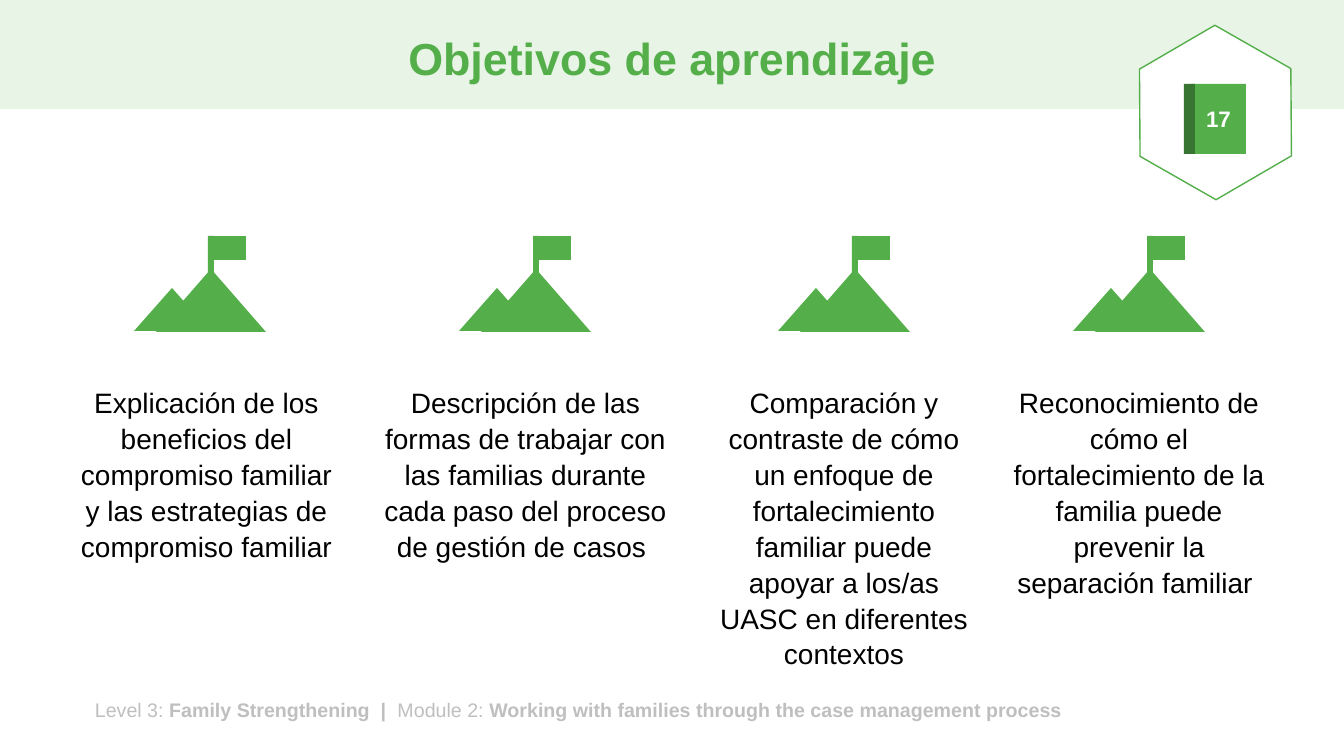
from pptx import Presentation
from pptx.dml.color import RGBColor
from pptx.enum.shapes import MSO_SHAPE as SHAPE
from pptx.enum.text import MSO_ANCHOR as ANCHOR, MSO_AUTO_SIZE as AUTO, PP_ALIGN as ALIGN
from pptx.util import Emu, Pt

GREEN, DARK, PALE, GRAY = "54AF4B", "387532", "E8F4E6", "BFBFBF"
WHITE, BLACK = "FFFFFF", "000000"


def px(n):
    return Emu(round(n * 914400 / 100.8))


def color(value):
    return RGBColor.from_string(value)


class Deck:
    font = "Arial"

    def __init__(self, width, height):
        self.prs = Presentation()
        self.prs.slide_width, self.prs.slide_height = px(width), px(height)
        self.s = self.prs.slides.add_slide(self.prs.slide_layouts[6])

    def fill_text(self, tf, *runs, size, fill, align=ALIGN.LEFT, spacing=1.0,
                  anchor=ANCHOR.TOP, wrap=True, auto=AUTO.NONE):
        tf.word_wrap, tf.auto_size, tf.vertical_anchor = wrap, auto, anchor
        p = tf.paragraphs[0]
        p.alignment, p.line_spacing = align, spacing
        for text, bold in runs:
            r = p.add_run()
            r.text = text
            r.font.name, r.font.size, r.font.bold = self.font, Pt(size), bold
            r.font.color.rgb = color(fill)

    def text(self, box, *runs, **style):
        sp = self.s.shapes.add_textbox(*map(px, box))
        self.fill_text(sp.text_frame, *runs, **style)

    def group(self):
        return self.s.shapes.add_group_shape().shapes

    def shape(self, kind, box, fill, line=None, shapes=None):
        sp = (shapes or self.s.shapes).add_shape(kind, *map(px, box))
        sp.shadow.inherit = False
        sp.fill.solid()
        sp.fill.fore_color.rgb = color(fill)
        if line:
            sp.line.color.rgb = color(line)
            sp.line.width = Pt(1)
        else:
            sp.line.fill.background()
        return sp

    def mountain(self, x, y):
        shapes = self.group()
        for kind, dx, dy, w, h in (
            (SHAPE.RECTANGLE, 74, 0, 6, 40),
            (SHAPE.RECTANGLE, 78, 0, 34, 24),
            (SHAPE.ISOSCELES_TRIANGLE, 22, 33, 110, 63),
            (SHAPE.ISOSCELES_TRIANGLE, 0, 52, 76, 43),
        ):
            self.shape(kind, (x + dx, y + dy, w, h), GREEN, shapes=shapes)

    def badge(self, number):
        shapes = self.group()
        sp = self.shape(SHAPE.HEXAGON, (1128, 37, 175, 151), WHITE, GREEN, shapes)
        sp.adjustments[0] = 0.29
        sp.rotation = 29.7
        sp = self.shape(SHAPE.RECTANGLE, (1191, 84, 55, 70), GREEN, shapes=shapes)
        self.fill_text(sp.text_frame, (number, True), size=16, fill=WHITE,
                       align=ALIGN.CENTER, anchor=ANCHOR.MIDDLE, wrap=False)
        self.shape(SHAPE.RECTANGLE, (1184, 84, 11, 70), DARK, shapes=shapes)


def main():
    deck = Deck(1344, 756)
    deck.shape(SHAPE.RECTANGLE, (0, 0, 1344, 109), PALE)
    deck.text((85, 693, 1070, 34),
              ("Level 3: ", False), ("Family Strengthening  |  ", True),
              ("Module 2: ", False),
              ("Working with families through the case management process", True),
              size=14, fill=GRAY, auto=AUTO.SHAPE_TO_FIT_TEXT)
    deck.text((93, 13, 1159, 96), ("Objetivos de aprendizaje", True),
              size=32, fill=GREEN, align=ALIGN.CENTER, spacing=0.9,
              anchor=ANCHOR.MIDDLE)

    objectives = (
        (67, 279, 192, 134, "Explicación de los beneficios del compromiso familiar "
         "y las estrategias de compromiso familiar"),
        (364, 323, 192, 459, "Descripción de las formas de trabajar con las familias "
         "durante cada paso del proceso de gestión de casos "),
        (706, 276, 300, 778, "Comparación y contraste de cómo un enfoque de "
         "fortalecimiento familiar puede apoyar a los/as UASC en diferentes contextos"),
        (1001, 276, 228, 1073, "Reconocimiento de cómo el fortalecimiento de la "
         "familia puede prevenir la separación familiar "),
    )
    for left, width, height, icon_left, objective in objectives:
        deck.text((left, 378, width, height), (objective, False), size=20,
                  fill=BLACK, align=ALIGN.CENTER, spacing=1.07,
                  auto=AUTO.SHAPE_TO_FIT_TEXT)
        deck.mountain(icon_left, 236)

    deck.badge("17")
    deck.prs.save("out.pptx")


if __name__ == "__main__":
    main()
